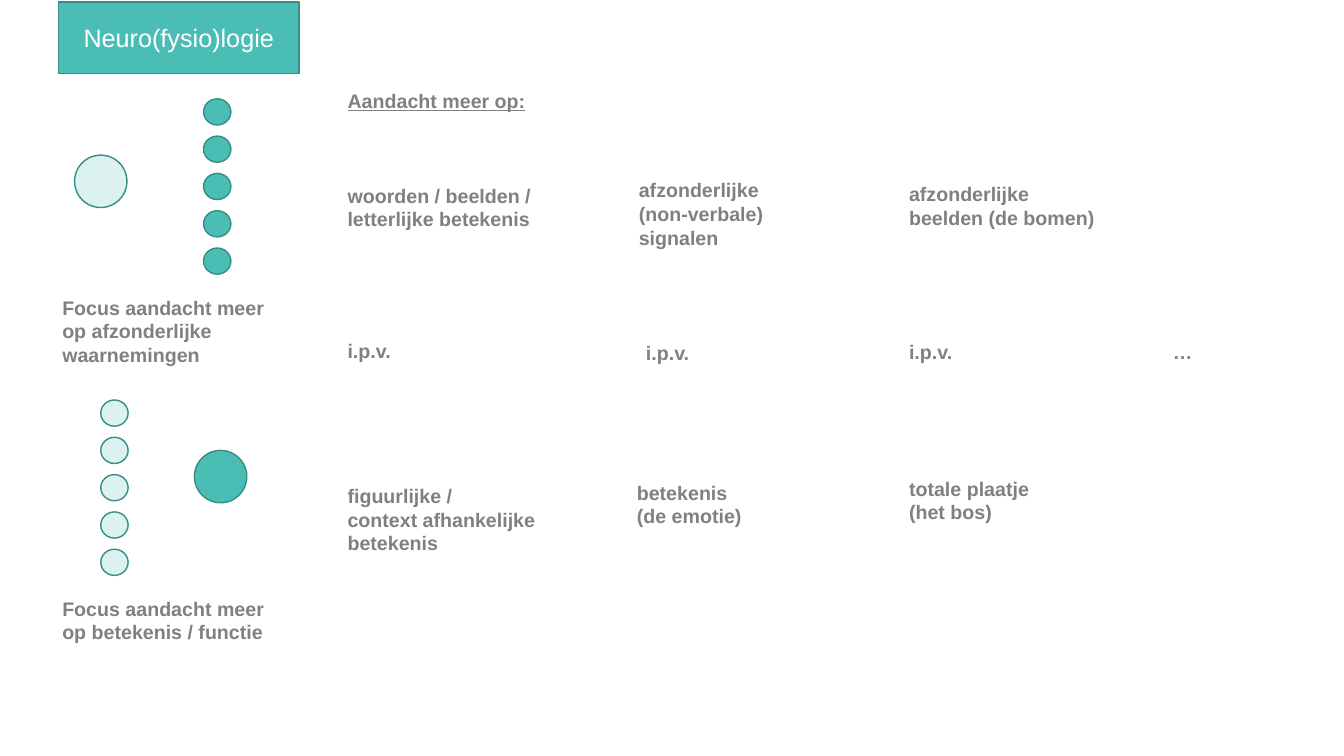
import pptx
import pptx.util
import pptx.dml.color
import pptx.enum.shapes
import pptx.enum.text

Cm = pptx.util.Cm
Pt = pptx.util.Pt
RGBColor = pptx.dml.color.RGBColor

TEAL = RGBColor(0x4A, 0xBD, 0xB4)
PALE_TEAL = RGBColor(0xDB, 0xF2, 0xF0)
DARK_TEAL = RGBColor(0x37, 0x8C, 0x85)
GRAY = RGBColor(0x80, 0x80, 0x80)
WHITE = RGBColor(0xFF, 0xFF, 0xFF)

DOT_COUNT = 5
DOT_STEP = 0.94


def paint(shape, fill):
    shape.fill.solid()
    shape.fill.fore_color.rgb = fill
    shape.line.color.rgb = DARK_TEAL
    shape.line.width = Pt(1)


def add_run(paragraph, text, size, color, bold=False, underline=False):
    run = paragraph.add_run()
    run.text = text
    font = run.font
    font.name = "Arial"
    font.size = Pt(size)
    font.color.rgb = color
    font.bold = bold
    font.underline = underline


def add_label(slide, left, top, width, lines, height=0.86, underline=False):
    label = slide.shapes.add_textbox(Cm(left), Cm(top), Cm(width), Cm(height))
    frame = label.text_frame
    frame.word_wrap = True
    frame.auto_size = pptx.enum.text.MSO_AUTO_SIZE.SHAPE_TO_FIT_TEXT
    for index, line in enumerate(lines):
        paragraph = frame.add_paragraph() if index else frame.paragraphs[0]
        add_run(paragraph, line, 14, GRAY, bold=True, underline=underline)


def add_circle(slide, left, top, width, height, fill):
    circle = slide.shapes.add_shape(pptx.enum.shapes.MSO_SHAPE.OVAL,
                                    Cm(left), Cm(top), Cm(width), Cm(height))
    circle.shadow.inherit = False
    paint(circle, fill)


def add_title(slide, left, top, width, height):
    title = slide.shapes.title
    title.left, title.top = Cm(left), Cm(top)
    title.width, title.height = Cm(width), Cm(height)
    paint(title, TEAL)
    frame = title.text_frame
    frame.auto_size = pptx.enum.text.MSO_AUTO_SIZE.NONE
    frame.vertical_anchor = pptx.enum.text.MSO_ANCHOR.MIDDLE
    paragraph = frame.paragraphs[0]
    paragraph.alignment = pptx.enum.text.PP_ALIGN.CENTER
    add_run(paragraph, "Neuro(fysio)logie", 18, WHITE)


def add_focus_panel(slide, left, top, width, whole, dots, caption, caption_height):
    """Whole is (dx, dy, fill) of the big circle, dots is (dx, fill)."""
    whole_dx, whole_dy, whole_fill = whole
    dots_dx, dots_fill = dots
    add_circle(slide, left + whole_dx, top + whole_dy, 1.32, 1.32, whole_fill)
    for index in range(DOT_COUNT):
        add_circle(slide, left + dots_dx, top + index * DOT_STEP, 0.69, 0.66, dots_fill)
    add_label(slide, left, top + 4.83, width, [caption], caption_height)


def add_contrast_column(slide, left, top, entries):
    """Each entry is (dx, dy, width, height, lines)."""
    for dx, dy, width, height, lines in entries:
        add_label(slide, left + dx, top + dy, width, lines, height)


def build_attention_slide(deck):
    slide = deck.slides.add_slide(deck.slide_layouts[5])
    add_title(slide, 1.47, 0.05, 6.07, 1.8)

    # Focus on separate perceptions, then on meaning
    add_focus_panel(slide, 1.32, 2.49, 6.22, (0.56, 1.42, PALE_TEAL), (3.81, TEAL),
                    "Focus aandacht meer op afzonderlijke waarnemingen", 2.06)
    add_focus_panel(slide, 1.32, 10.08, 5.92, (3.58, 1.27, TEAL), (1.22, PALE_TEAL),
                    "Focus aandacht meer op betekenis / functie", 1.45)

    # Detail, "instead of" and whole in each column
    add_label(slide, 8.51, 2.11, 5.59, ["Aandacht meer op:"], underline=True)
    add_contrast_column(slide, 8.51, 4.37, [
        (0, 0.13, 5.82, 1.45, ["woorden / beelden / letterlijke betekenis"]),
        (0, 4.04, 1.8, 0.86, ["i.p.v."]),
        (0, 7.7, 5.49, 2.06, ["figuurlijke /", "context afhankelijke betekenis"]),
    ])
    add_contrast_column(slide, 15.85, 4.37, [
        (0, 0, 5.49, 2.06, ["afzonderlijke", "(non-verbale) signalen"]),
        (0.18, 4.09, 1.8, 0.86, ["i.p.v."]),
        (-0.05, 7.62, 4.09, 1.45, ["betekenis", "(de emotie)"]),
    ])
    add_contrast_column(slide, 22.66, 4.37, [
        (0, 0.1, 5.49, 1.45, ["afzonderlijke", "beelden (de bomen)"]),
        (0, 4.06, 1.8, 0.86, ["i.p.v."]),
        (0, 7.52, 4.39, 1.45, ["totale plaatje (het bos)"]),
    ])
    add_contrast_column(slide, 29.31, 4.37, [(0, 4.06, 1.8, 0.86, ["…"])])


def main():
    deck = pptx.Presentation()
    deck.slide_width, deck.slide_height = Cm(33.87), Cm(19.05)
    build_attention_slide(deck)
    deck.save("out.pptx")


if __name__ == "__main__":
    main()
